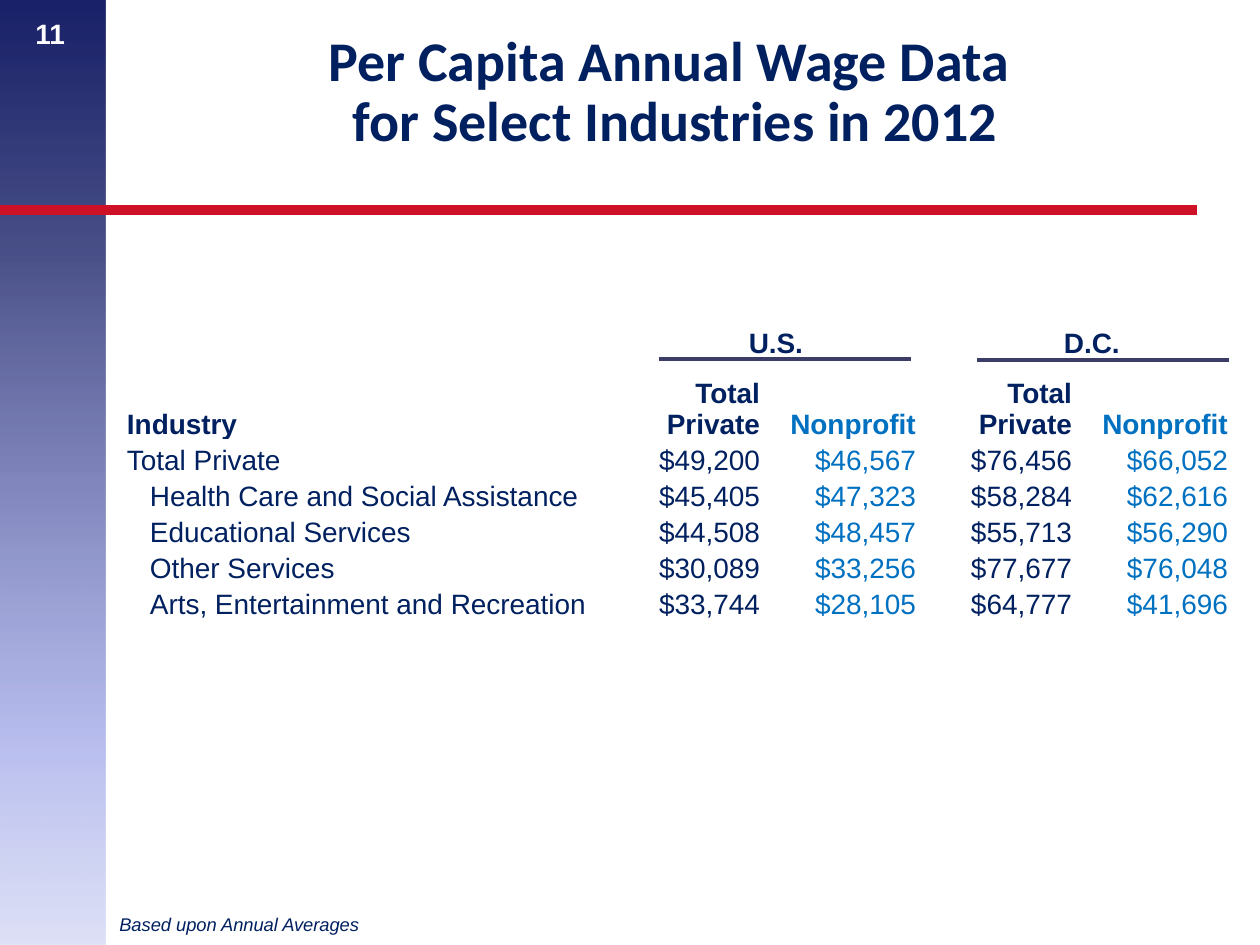
from dataclasses import dataclass

from lxml import etree
from pptx import Presentation
from pptx import util as u
from pptx.dml.color import RGBColor
from pptx.enum import shapes, text
from pptx.oxml import parse_xml
from pptx.oxml.ns import nsdecls, qn

EMU_PER_PX = 914400 / 126


@dataclass(frozen=True)
class Theme:
    navy: str = "002060"
    blue: str = "0070C0"
    rule: str = "3C3D66"
    red: str = "CE1126"
    white: str = "FFFFFF"
    body_font: str = "Arial"
    title_font: str = "Calibri"
    title_size: float = 32
    body_size: float = 16
    note_size: float = 10.5
    # position %, colour, opacity %
    strip_stops: tuple = ((0, "192168", 100), (26, "192168", 79),
                          (78, "969EE6", 68), (100, "CACEF2", 61))


THEME = Theme()

TITLE = ("Per Capita Annual Wage Data ", "for Select Industries in 2012")
REGIONS = (("U.S.", 31), ("D.C.", 39))  # name, left margin
HEADINGS = ("Industry",) + ("Total Private", "Nonprofit") * 2
WAGES = (
    ("Total Private", "$49,200", "$46,567", "$76,456", "$66,052"),
    ("Health Care and Social Assistance", "$45,405", "$47,323", "$58,284", "$62,616"),
    ("Educational Services", "$44,508", "$48,457", "$55,713", "$56,290"),
    ("Other Services", "$30,089", "$33,256", "$77,677", "$76,048"),
    ("Arts, Entertainment and Recreation", "$33,744", "$28,105", "$64,777", "$41,696"),
)
COLUMN_WIDTHS = (479, 156, 156, 156, 156)
ROW_HEIGHTS = (57, 68) + (36,) * len(WAGES)
INDUSTRY_INDENT = 24


def px(length):
    return u.Emu(round(length * EMU_PER_PX))


def style(paragraph, size, color, bold=False, italic=False, name=THEME.body_font):
    font = paragraph.font
    font.name, font.size = name, u.Pt(size)
    font.bold, font.italic = bold, italic
    font.color.rgb = RGBColor.from_string(color)


def add_side_strip(slide):
    strip = slide.shapes.add_shape(shapes.MSO_SHAPE.RECTANGLE, 0, 0, px(105), px(945))
    strip.shadow.inherit = False
    strip.line.fill.background()
    stops = "".join(
        f'<a:gs pos="{position * 1000}"><a:srgbClr val="{color}">'
        f'<a:alpha val="{opacity * 1000}"/></a:srgbClr></a:gs>'
        for position, color, opacity in THEME.strip_stops)
    gradient = parse_xml(
        f'<a:gradFill {nsdecls("a")} rotWithShape="1"><a:gsLst>{stops}</a:gsLst>'
        '<a:lin ang="5400000" scaled="0"/></a:gradFill>')
    strip.element.spPr.find(qn("a:prstGeom")).addnext(gradient)


def add_rule(slide, left, right, y, color, weight):
    rule = slide.shapes.add_connector(
        shapes.MSO_CONNECTOR.STRAIGHT, px(left), px(y), px(right), px(y))
    rule.line.color.rgb = RGBColor.from_string(color)
    rule.line.width = u.Pt(weight)
    etree.SubElement(rule.element.spPr, qn("a:effectLst"))


def add_title(slide):
    title = slide.shapes.title
    title.left, title.top, title.width, title.height = px(102), px(18), px(1147), px(151)
    frame = title.text_frame
    frame.auto_size = text.MSO_AUTO_SIZE.NONE
    frame.vertical_anchor = text.MSO_ANCHOR.MIDDLE
    frame.text = "\n".join(TITLE)
    for paragraph in frame.paragraphs:
        paragraph.alignment = text.PP_ALIGN.CENTER
        paragraph.line_spacing = 0.9
        style(paragraph, THEME.title_size, THEME.navy, bold=True, name=THEME.title_font)


def add_label(slide, words, left, top, width, height, **look):
    frame = slide.shapes.add_textbox(px(left), px(top), px(width), px(height)).text_frame
    frame.word_wrap = False
    frame.auto_size = text.MSO_AUTO_SIZE.SHAPE_TO_FIT_TEXT
    frame.text = words
    style(frame.paragraphs[0], **look)


def fill_cell(cell, words, color, align, anchor=text.MSO_ANCHOR.BOTTOM, bold=False, indent=1):
    cell.margin_left, cell.margin_right = px(indent), px(1)
    cell.margin_top, cell.margin_bottom = px(1), 0
    cell.vertical_anchor = anchor
    cell.text = words
    paragraph = cell.text_frame.paragraphs[0]
    paragraph.alignment = align
    style(paragraph, THEME.body_size, color, bold=bold)


def add_wage_table(slide):
    table = slide.shapes.add_table(
        len(ROW_HEIGHTS), len(COLUMN_WIDTHS), px(126), px(315),
        px(sum(COLUMN_WIDTHS)), px(sum(ROW_HEIGHTS))).table
    table.first_row = table.horz_banding = False
    for column, width in zip(table.columns, COLUMN_WIDTHS):
        column.width = px(width)
    for row, height in zip(table.rows, ROW_HEIGHTS):
        row.height = px(height)
    for cell in table.iter_cells():
        cell.fill.background()

    for index, (region, indent) in enumerate(REGIONS):
        first = 1 + 2 * index
        heading = table.cell(0, first)
        heading.merge(table.cell(0, first + 1))
        fill_cell(heading, region, THEME.navy, text.PP_ALIGN.CENTER,
                  text.MSO_ANCHOR.MIDDLE, bold=True, indent=indent)

    for r, values in enumerate((HEADINGS,) + WAGES, start=1):
        for c, value in enumerate(values):
            nonprofit = c in (2, 4)
            fill_cell(table.cell(r, c), value,
                      THEME.blue if nonprofit else THEME.navy,
                      text.PP_ALIGN.RIGHT if c else text.PP_ALIGN.LEFT,
                      bold=r == 1,
                      indent=INDUSTRY_INDENT if c == 0 and r > 2 else 1)


def main():
    deck = Presentation()
    deck.slide_width, deck.slide_height = px(1260), px(945)
    slide = deck.slides.add_slide(deck.slide_layouts[5])
    add_side_strip(slide)
    add_rule(slide, 0, 1197, 210, THEME.red, 6)
    add_title(slide)
    add_label(slide, "11", 23, 10, 62, 47,
              size=THEME.body_size, color=THEME.white, bold=True)
    add_label(slide, "Based upon Annual Averages", 107, 907, 339, 36,
              size=THEME.note_size, color=THEME.navy, italic=True)
    add_wage_table(slide)
    for left, y in ((659, 359), (977, 360)):
        add_rule(slide, left, left + 252, y, THEME.rule, 2)
    deck.save("out.pptx")


if __name__ == "__main__":
    main()
